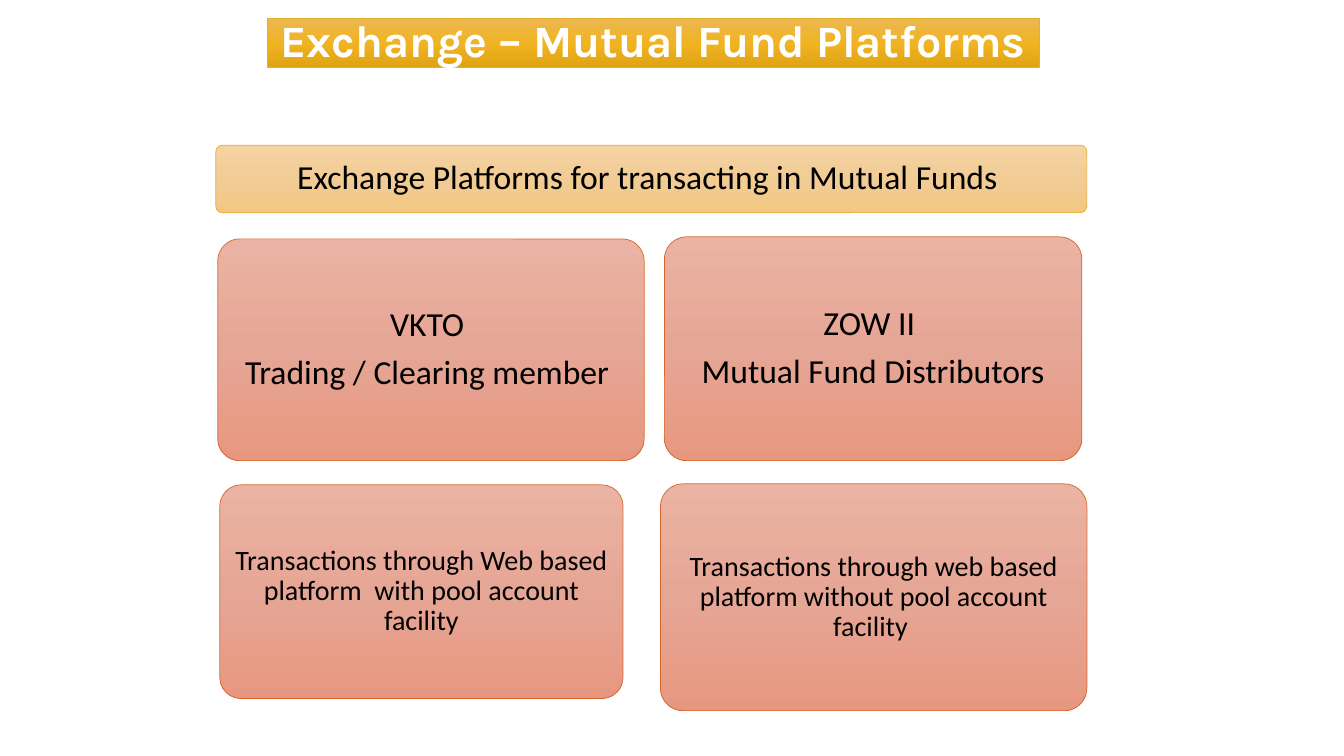
"""Builds a slide that compares two exchange platforms for mutual funds."""
from copy import deepcopy
from dataclasses import dataclass

from pptx import Presentation
from pptx import util as u
from pptx.dml.color import RGBColor
from pptx.enum import shapes, text
from pptx.oxml.ns import qn


@dataclass(frozen=True)
class Theme:
    title_fill: tuple = ("ECB854", "F0B322", "E0A313")
    header_fill: tuple = ("F4D4A3", "F1CC95", "F3C781")
    card_fill: tuple = ("EBB3A3", "E6A695", "E79780")
    gold_line: str = "E7AF2B"
    rust_line: str = "D8662B"
    light: str = "FFFFFF"
    dark: str = "000000"
    title_size: int = 32
    heading_size: int = 24
    detail_size: int = 20
    title_font: str = "Karla"
    body_font: str = "Calibri"


THEME = Theme()
WIDTH, HEIGHT = 13.33, 7.5

TITLE = ("Exchange – Mutual Fund Platforms", (19.88, 2.4, 57.46, 6.53))
HEADER = ("Exchange Platforms for transacting in Mutual Funds ", (16.05, 19.2, 64.82, 8.93))
PLATFORMS = [
    (["VKTO ", "Trading / Clearing member "], (16.2, 31.6, 31.73, 29.33)),
    (["ZOW II ", "Mutual Fund Distributors"], (49.44, 31.33, 31.06, 29.6)),
]
DETAILS = [
    (["Transactions through Web based platform  with pool account facility"],
     (16.35, 64.13, 30.01, 28.27)),
    (["Transactions through web based platform without pool account facility "],
     (49.14, 64, 31.73, 30)),
]


def add_panel(page, preset, shares, colours, line):
    left, top, width, height = (
        u.Inches(share / 100 * side)
        for share, side in zip(shares, (WIDTH, HEIGHT, WIDTH, HEIGHT)))
    panel = page.shapes.add_shape(preset, left, top, width, height)
    panel.shadow.inherit = False
    if preset == shapes.MSO_SHAPE.ROUNDED_RECTANGLE:
        panel.adjustments[0] = 0.1
    panel.fill.gradient()
    panel.fill.gradient_angle = 270
    stop_list = panel._element.spPr.find(qn("a:gradFill")).find(qn("a:gsLst"))
    stop_list.insert(1, deepcopy(stop_list[0]))
    for stop, colour, position in zip(panel.fill.gradient_stops, colours, (0, 0.5, 1)):
        stop.color.rgb = RGBColor.from_string(colour)
        stop.position = position
    panel.line.color.rgb = RGBColor.from_string(line)
    panel.line.width = u.Pt(0.5)
    return panel


def write(box, lines, size, font=THEME.body_font, colour=THEME.dark,
          bold=False, inset=0.1, after=0.35):
    frame = box.text_frame
    frame.word_wrap = True
    frame.vertical_anchor = text.MSO_ANCHOR.MIDDLE
    frame.margin_left = frame.margin_right = u.Inches(inset)
    frame.margin_top = frame.margin_bottom = u.Inches(inset if after else inset / 2)
    for index, line in enumerate(lines):
        para = frame.add_paragraph() if index else frame.paragraphs[0]
        para.alignment = text.PP_ALIGN.CENTER
        para.line_spacing = 0.9
        para.space_after = u.Pt(size * after)
        span = para.add_run()
        span.text = line
        span.font.size = u.Pt(size)
        span.font.name = font
        span.font.bold = bold
        span.font.color.rgb = RGBColor.from_string(colour)


def main():
    deck = Presentation()
    deck.slide_width, deck.slide_height = u.Inches(WIDTH), u.Inches(HEIGHT)
    page = deck.slides.add_slide(deck.slide_layouts[6])
    rounded = shapes.MSO_SHAPE.ROUNDED_RECTANGLE

    wording, shares = HEADER
    header = add_panel(page, rounded, shares, THEME.header_fill, THEME.gold_line)
    write(header, [wording], THEME.heading_size)

    for cards, size, inset in ((PLATFORMS, THEME.heading_size, 0.1),
                               (DETAILS, THEME.detail_size, 0.08)):
        for lines, shares in cards:
            card = add_panel(page, rounded, shares, THEME.card_fill, THEME.rust_line)
            write(card, lines, size, inset=inset)

    wording, shares = TITLE
    title = add_panel(page, shapes.MSO_SHAPE.RECTANGLE, shares,
                      THEME.title_fill, THEME.gold_line)
    write(title, [wording], THEME.title_size, font=THEME.title_font,
          colour=THEME.light, bold=True, after=0)
    deck.save("out.pptx")


if __name__ == "__main__":
    main()
